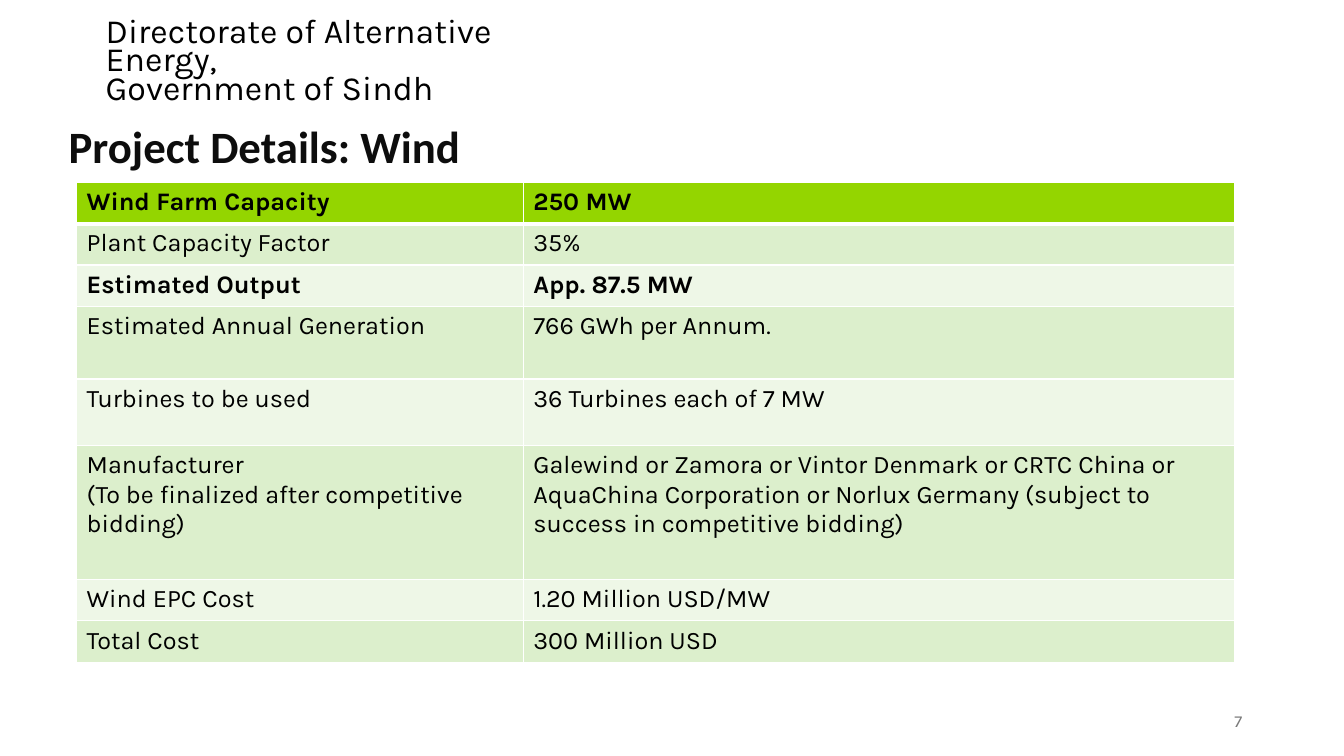
from dataclasses import dataclass

from pptx import Presentation
from pptx.dml.color import RGBColor
from pptx.enum.text import MSO_ANCHOR, MSO_AUTO_SIZE, PP_ALIGN
from pptx.oxml import parse_xml
from pptx.oxml.ns import nsdecls
from pptx.slide import Slide
from pptx.table import _Cell
from pptx.util import Inches, Pt


@dataclass(frozen=True)
class Theme:
    body_font: str = "Karla"
    title_font: str = "Calibri"
    text: str = "000000"
    title: str = "0D0D0D"
    muted: str = "797979"
    header_fill: str = "94D500"
    band_fills: tuple[str, str] = ("DCEFCC", "EEF7E7")
    border: str = "FFFFFF"
    header_size: float = 24.2
    title_size: float = 32
    table_size: float = 18
    number_size: float = 12


THEME = Theme()


@dataclass(frozen=True)
class TextStyle:
    font: str
    size: float
    color: str
    bold: bool = False
    align: PP_ALIGN = PP_ALIGN.LEFT
    line_spacing: float = 1.0


@dataclass(frozen=True)
class Detail:
    label: str
    value: str
    height: float = 0.41
    bold: bool = False
    value_align: PP_ALIGN = PP_ALIGN.LEFT


DETAILS = [
    Detail("Wind Farm Capacity", "250 MW", bold=True),
    Detail("Plant Capacity Factor", "35%"),
    Detail("Estimated Output", "App. 87.5 MW", bold=True, value_align=PP_ALIGN.JUSTIFY),
    Detail("Estimated Annual Generation", "766 GWh per Annum.", 0.72),
    Detail("Turbines to be used", "36 Turbines each of 7 MW", 0.66),
    Detail(
        "Manufacturer\n(To be finalized after competitive bidding)",
        "Galewind or Zamora or Vintor Denmark or CRTC China or "
        "AquaChina Corporation or Norlux Germany (subject to "
        "success in competitive bidding)",
        1.33,
    ),
    Detail("Wind EPC Cost", "1.20 Million USD/MW", value_align=PP_ALIGN.JUSTIFY),
    Detail("Total Cost", "300 Million USD", value_align=PP_ALIGN.JUSTIFY),
]
COLUMN_WIDTHS = (4.43, 7.06)


def write_text(frame, text: str, style: TextStyle) -> None:
    frame.text = text
    for paragraph in frame.paragraphs:
        paragraph.alignment = style.align
        paragraph.line_spacing = style.line_spacing
        paragraph.space_before = Pt(0)
        paragraph.font.name = style.font
        paragraph.font.size = Pt(style.size)
        paragraph.font.bold = style.bold
        paragraph.font.color.rgb = RGBColor.from_string(style.color)


def format_box(shape, text: str, style: TextStyle) -> None:
    frame = shape.text_frame
    frame.word_wrap = True
    frame.auto_size = MSO_AUTO_SIZE.NONE
    frame.vertical_anchor = MSO_ANCHOR.MIDDLE
    write_text(frame, text, style)


def add_text(slide: Slide, left: float, top: float, width: float, height: float,
             text: str, style: TextStyle) -> None:
    box = slide.shapes.add_textbox(Inches(left), Inches(top), Inches(width), Inches(height))
    format_box(box, text, style)


def set_borders(cell: _Cell, top: float, bottom: float) -> None:
    """Draw the four cell borders, with top and bottom widths in points."""
    properties = cell._tc.get_or_add_tcPr()
    for side, width in (("L", 1), ("R", 1), ("T", top), ("B", bottom)):
        properties.append(parse_xml(
            f'<a:ln{side} {nsdecls("a")} w="{Pt(width)}"><a:solidFill>'
            f'<a:srgbClr val="{THEME.border}"/></a:solidFill></a:ln{side}>'
        ))


def add_details_table(slide: Slide, details: list[Detail]) -> None:
    frame = slide.shapes.add_table(
        len(details), len(COLUMN_WIDTHS), Inches(0.76), Inches(1.81),
        Inches(sum(COLUMN_WIDTHS)), Inches(sum(detail.height for detail in details)),
    )
    table = frame.table
    table.horz_banding = False
    for column, width in zip(table.columns, COLUMN_WIDTHS):
        column.width = Inches(width)
    for index, detail in enumerate(details):
        table.rows[index].height = Inches(detail.height)
        fill = THEME.band_fills[(index - 1) % 2] if index else THEME.header_fill
        entries = ((detail.label, PP_ALIGN.LEFT), (detail.value, detail.value_align))
        for cell, (text, align) in zip(table.rows[index].cells, entries):
            set_borders(cell, top=3 if index == 1 else 1, bottom=1 if index else 3)
            cell.fill.solid()
            cell.fill.fore_color.rgb = RGBColor.from_string(fill)
            write_text(cell.text_frame, text, TextStyle(
                THEME.body_font, THEME.table_size, THEME.text, detail.bold, align))


def place_title(slide: Slide, text: str) -> None:
    title = slide.shapes.title
    title.left, title.top = Inches(0.58), Inches(1.14)
    title.width, title.height = Inches(8.25), Inches(0.67)
    format_box(title, text, TextStyle(
        THEME.title_font, THEME.title_size, THEME.title, bold=True, line_spacing=0.9))


def main() -> None:
    deck = Presentation()
    deck.slide_width, deck.slide_height = Inches(13.33), Inches(7.5)
    title_only = deck.slide_layouts.get_by_name("Title Only")
    page = deck.slides.add_slide(title_only)
    add_text(page, 0.95, 0.24, 4.64, 0.77,
             "Directorate of Alternative Energy,\nGovernment of Sindh",
             TextStyle(THEME.body_font, THEME.header_size, THEME.text, line_spacing=0.7))
    place_title(page, "Project Details: Wind")
    add_details_table(page, DETAILS)
    add_text(page, 9.42, 6.95, 3, 0.4, "7", TextStyle(
        THEME.body_font, THEME.number_size, THEME.muted, align=PP_ALIGN.RIGHT))
    deck.save("out.pptx")


if __name__ == "__main__":
    main()
